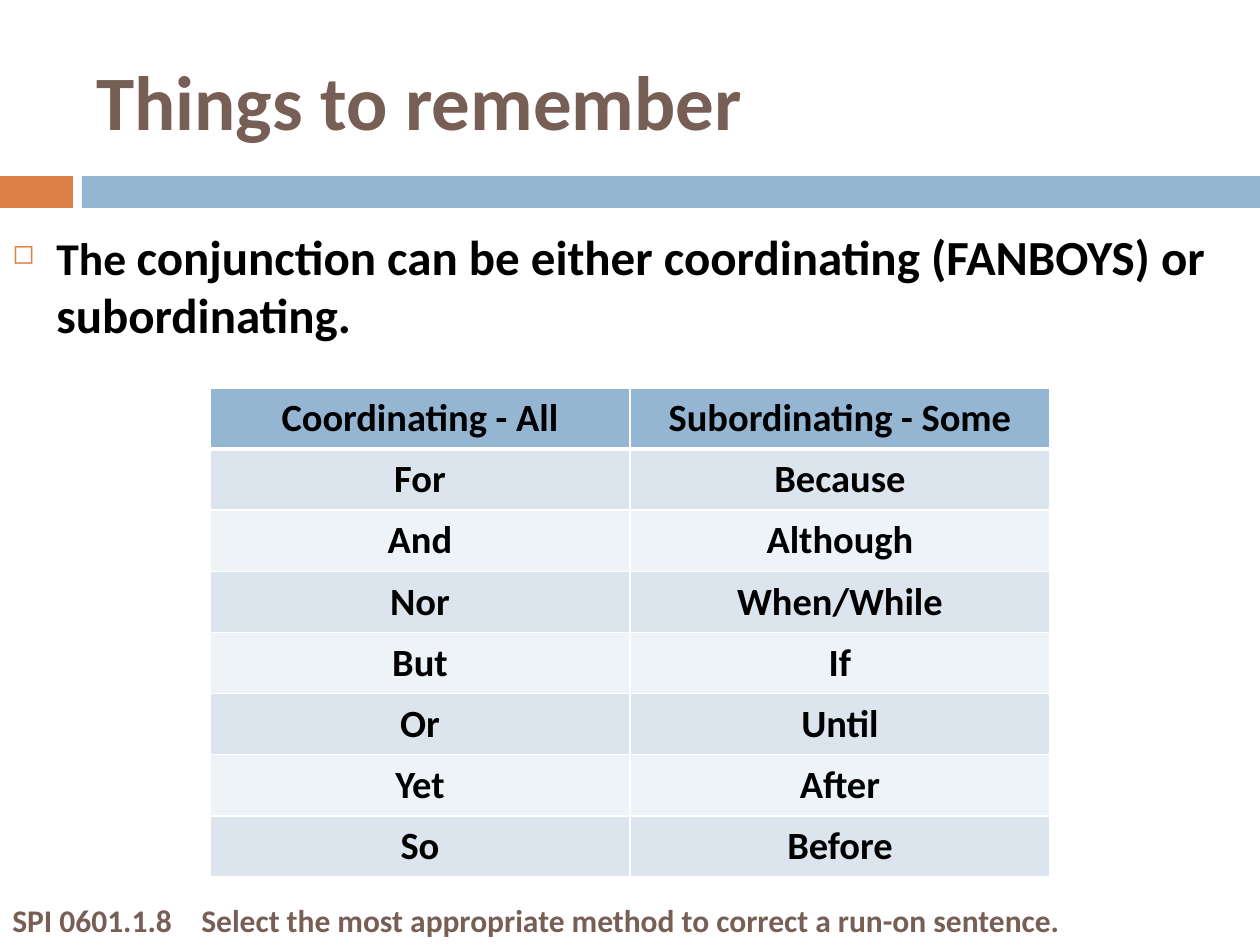
from lxml import etree
from pptx import Presentation
from pptx.dml.color import RGBColor
from pptx.enum.shapes import MSO_SHAPE
from pptx.enum.text import MSO_ANCHOR, PP_ALIGN
from pptx.oxml.ns import qn
from pptx.util import Emu, Pt

RECTANGLE = MSO_SHAPE.RECTANGLE
TOP, MIDDLE = MSO_ANCHOR.TOP, MSO_ANCHOR.MIDDLE
CENTER = PP_ALIGN.CENTER

PX = 914400 // 126
FONT = "Calibri"
BLACK, WHITE, BROWN = "000000", "FFFFFF", "775F55"
ORANGE, BLUE = "DD8047", "94B6D2"
BAND_COLORS = ("EEF3F7", "DCE5EE")

CONJUNCTIONS = [
    ("Coordinating - All", "Subordinating - Some"),
    ("For", "Because"),
    ("And", "Although"),
    ("Nor", "When/While"),
    ("But", "If"),
    ("Or", "Until"),
    ("Yet", "After"),
    ("So", "Before"),
]


def px(length):
    return Emu(length * PX)


def rgb(color):
    return RGBColor.from_string(color)


def add_bar(slide, left, top, width, height, color):
    bar = slide.shapes.add_shape(RECTANGLE, px(left), px(top), px(width), px(height))
    bar.shadow.inherit = False
    bar.fill.solid()
    bar.fill.fore_color.rgb = rgb(color)
    bar.line.fill.background()


def add_run(paragraph, text, size, color):
    run = paragraph.add_run()
    run.text = text
    run.font.name = FONT
    run.font.size = Pt(size)
    run.font.bold = True
    run.font.color.rgb = rgb(color)


def add_text(slide, left, top, width, height, runs, color, anchor=TOP):
    """Add a one-paragraph text box from (text, size) runs; return the paragraph."""
    box = slide.shapes.add_textbox(px(left), px(top), px(width), px(height))
    frame = box.text_frame
    frame.word_wrap = True
    frame.vertical_anchor = anchor
    paragraph = frame.paragraphs[0]
    for text, size in runs:
        add_run(paragraph, text, size, color)
    return paragraph


def add_child(parent, tag, **attributes):
    child = etree.SubElement(parent, qn(tag))
    for name, value in attributes.items():
        child.set(name, str(value))
    return child


def set_bullet(paragraph, char, color, percent, indent):
    properties = paragraph._p.get_or_add_pPr()
    properties.set("marL", str(px(indent)))
    properties.set("indent", str(-px(indent)))
    add_child(add_child(properties, "a:buClr"), "a:srgbClr", val=color)
    add_child(properties, "a:buSzPct", val=percent * 1000)
    add_child(properties, "a:buChar", char=char)


def set_tab_stop(paragraph, position):
    tabs = add_child(paragraph._p.get_or_add_pPr(), "a:tabLst")
    add_child(tabs, "a:tab", pos=px(position), algn="l")


def set_borders(cell, color, bottom_width):
    properties = cell._tc.get_or_add_tcPr()
    widths = {"a:lnL": 1, "a:lnR": 1, "a:lnT": 1, "a:lnB": bottom_width}
    for position, (tag, width) in enumerate(widths.items()):
        line = etree.Element(qn(tag), w=str(Pt(width)))
        add_child(add_child(line, "a:solidFill"), "a:srgbClr", val=color)
        properties.insert(position, line)


def fill_cell(cell, text, color, bottom_width):
    cell.fill.solid()
    cell.fill.fore_color.rgb = rgb(color)
    cell.vertical_anchor = MIDDLE
    cell.margin_left = cell.margin_right = px(15)
    cell.margin_top = cell.margin_bottom = px(7)
    paragraph = cell.text_frame.paragraphs[0]
    paragraph.alignment = CENTER
    add_run(paragraph, text, 22, BLACK)
    set_borders(cell, WHITE, bottom_width)


def add_conjunction_table(slide, left, top, width, height):
    rows, columns = len(CONJUNCTIONS), len(CONJUNCTIONS[0])
    table = slide.shapes.add_table(
        rows, columns, px(left), px(top), px(width), px(height)
    ).table
    for row, words in enumerate(CONJUNCTIONS):
        is_header = row == 0
        color = BLUE if is_header else BAND_COLORS[row % 2]
        # The row below a header shares the header's thick rule.
        for column, word in enumerate(words):
            fill_cell(table.cell(row, column), word, color, 3 if is_header else 1)
    for column in range(columns):
        table.cell(1, column)._tc.tcPr.find(qn("a:lnT")).set("w", str(Pt(3)))


def main():
    presentation = Presentation()
    presentation.slide_width, presentation.slide_height = px(1260), px(945)
    slide = presentation.slides.add_slide(presentation.slide_layouts[6])

    add_bar(slide, 0, 176, 73, 32, ORANGE)
    add_bar(slide, 82, 176, 1178, 32, BLUE)
    add_text(slide, 84, 32, 1124, 136, [("Things to remember", 44)], BROWN, MIDDLE)

    rule = add_text(
        slide, 0, 220, 1260, 620,
        [
            ("The ", 26),
            ("conjunction can be either coordinating (FANBOYS) or subordinating.", 28),
        ],
        BLACK,
    )
    rule.space_before = Pt(7)
    set_bullet(rule, "◻", ORANGE, 60, 44)

    standard = add_text(
        slide, 0, 895, 1260, 50,
        [("SPI 0601.1.8\tSelect the most appropriate method to correct a run-on sentence.", 18)],
        BROWN,
    )
    set_tab_stop(standard, 189)

    add_conjunction_table(slide, 210, 388, 840, 489)
    presentation.save("out.pptx")


if __name__ == "__main__":
    main()
